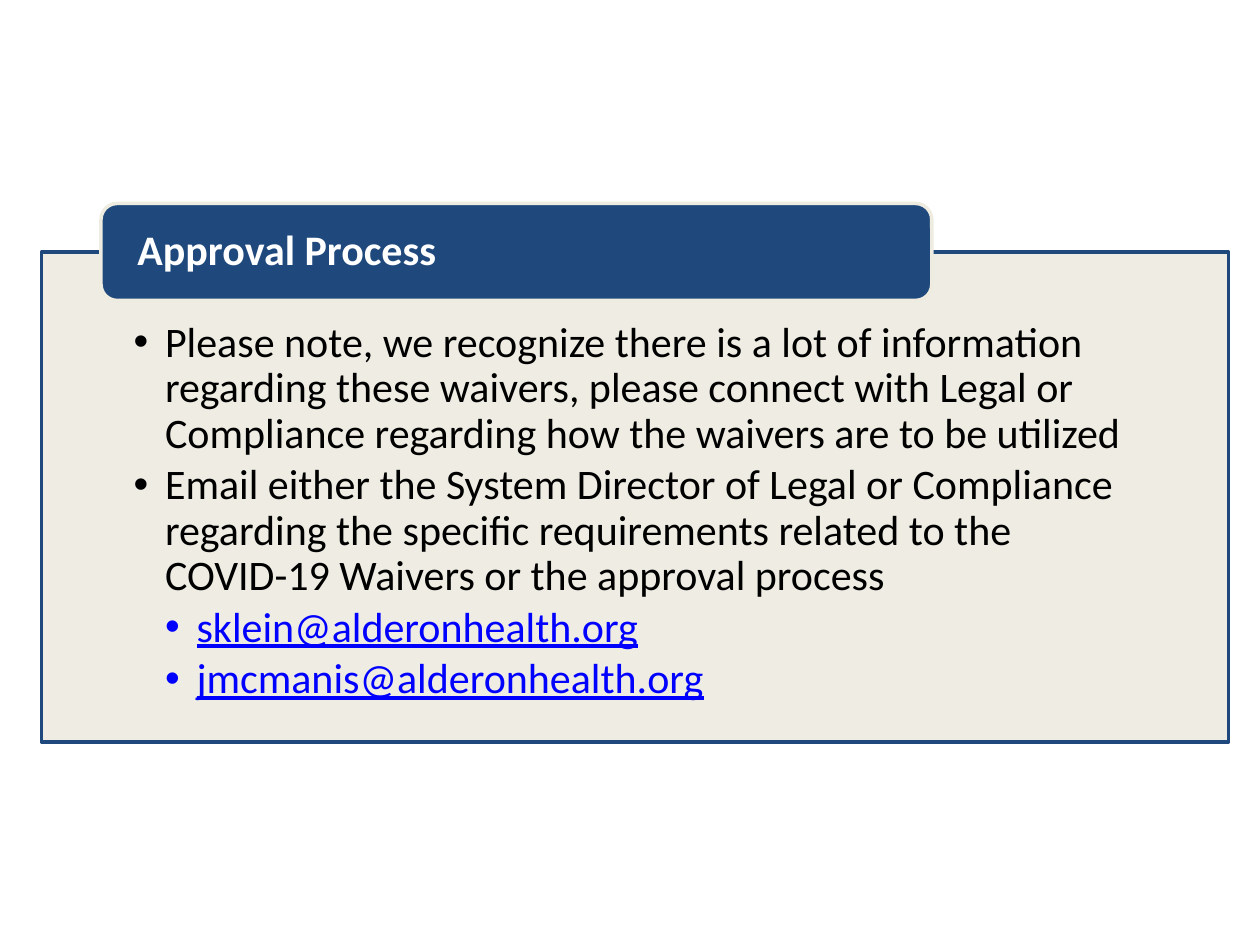
from lxml import etree
from pptx import Presentation
from pptx.dml.color import RGBColor
from pptx.enum.shapes import MSO_SHAPE
from pptx.enum.text import MSO_ANCHOR, MSO_AUTO_SIZE, PP_ALIGN
from pptx.oxml.ns import qn
from pptx.util import Inches, Pt

RECT, ROUNDED = MSO_SHAPE.RECTANGLE, MSO_SHAPE.ROUNDED_RECTANGLE
TOP, MIDDLE = MSO_ANCHOR.TOP, MSO_ANCHOR.MIDDLE
LEFT, NO_FIT = PP_ALIGN.LEFT, MSO_AUTO_SIZE.NONE
TITLE_ONLY = 5

COLORS = {name: RGBColor.from_string(code) for name, code in {
    "navy": "1F497D", "cream": "EEECE1", "ink": "000000",
    "link": "0000FF", "white": "FFFFFF"}.items()}
FONT, TEXT_SIZE, LINE_SPACING = "Calibri", Pt(24), 0.9
ITEM_GAP = Pt(3.6)
INDENT = Inches(0.25)

HEADING = "Approval Process"
GUIDANCE = [
    "Please note, we recognize there is a lot of information regarding these "
    "waivers, please connect with Legal or Compliance regarding how the "
    "waivers are to be utilized",
    "Email either the System Director of Legal or Compliance regarding the "
    "specific requirements related to the COVID-19 Waivers or the approval "
    "process",
]
CONTACTS = ["sklein@alderonhealth.org", "jmcmanis@alderonhealth.org"]


def apply(target, **values):
    for name, value in values.items():
        setattr(target, name, value)


def add_block(slide, kind, box, fill, outline):
    block = slide.shapes.add_shape(kind, *box)
    block.shadow.inherit = False
    block.fill.solid()
    block.fill.fore_color.rgb = COLORS[fill]
    block.line.color.rgb = COLORS[outline]
    block.line.width = Pt(2)
    return block


def set_frame(frame, anchor, side, top=0, bottom=0):
    apply(frame, word_wrap=True, auto_size=NO_FIT, vertical_anchor=anchor,
          margin_left=Inches(side), margin_right=Inches(side),
          margin_top=Inches(top), margin_bottom=Inches(bottom))


def write(paragraph, text, color, **font_values):
    paragraph.text = text
    apply(paragraph, alignment=LEFT, line_spacing=LINE_SPACING)
    font = paragraph.runs[0].font
    apply(font, name=FONT, size=TEXT_SIZE, **font_values)
    font.color.rgb = COLORS[color]


def add_bullet(paragraph, level):
    properties = paragraph._p.get_or_add_pPr()
    properties.set("marL", str(INDENT * (level + 1)))
    properties.set("indent", str(-INDENT))
    etree.SubElement(properties, qn("a:buFont"), typeface="Arial")
    etree.SubElement(properties, qn("a:buChar"), char="•")
    apply(paragraph, level=level, space_after=ITEM_GAP)


def add_panel(slide, box):
    panel = add_block(slide, RECT, box, "cream", "navy")
    fill_color = panel._element.spPr.find(qn("a:solidFill")).find(qn("a:srgbClr"))
    etree.SubElement(fill_color, qn("a:alpha"), val="90000")
    frame = panel.text_frame
    set_frame(frame, TOP, 0.73, top=0.55, bottom=0.19)
    items = [(text, 0, "ink", False) for text in GUIDANCE]
    items += [(address, 1, "link", True) for address in CONTACTS]
    for index, (text, level, color, underline) in enumerate(items):
        paragraph = frame.add_paragraph() if index else frame.paragraphs[0]
        add_bullet(paragraph, level)
        write(paragraph, text, color, underline=underline)


def add_heading_tab(slide, box):
    add_block(slide, ROUNDED, box, "navy", "cream")
    left, top, width, height = box
    inset = Inches(0.04)
    title = slide.shapes.title
    apply(title, left=left + inset, top=top + inset,
          width=width - 2 * inset, height=height - 2 * inset)
    set_frame(title.text_frame, MIDDLE, 0.25)
    write(title.text_frame.paragraphs[0], HEADING, "white", bold=True)
    # The title text lies in front of its tab.
    slide.shapes._spTree.append(title._element)


def main():
    deck = Presentation()
    apply(deck, slide_width=Inches(10), slide_height=Inches(7.5))
    slide = deck.slides.add_slide(deck.slide_layouts[TITLE_ONLY])

    left, top, width, height = map(Inches, (0.33, 2, 9.42, 3.89))
    add_panel(slide, (left, top, width, height))
    tab_height = Inches(0.77)
    add_heading_tab(slide, (left + int(width * 0.05), top - tab_height // 2,
                            int(width * 0.7), tab_height))
    deck.save("out.pptx")


if __name__ == "__main__":
    main()
